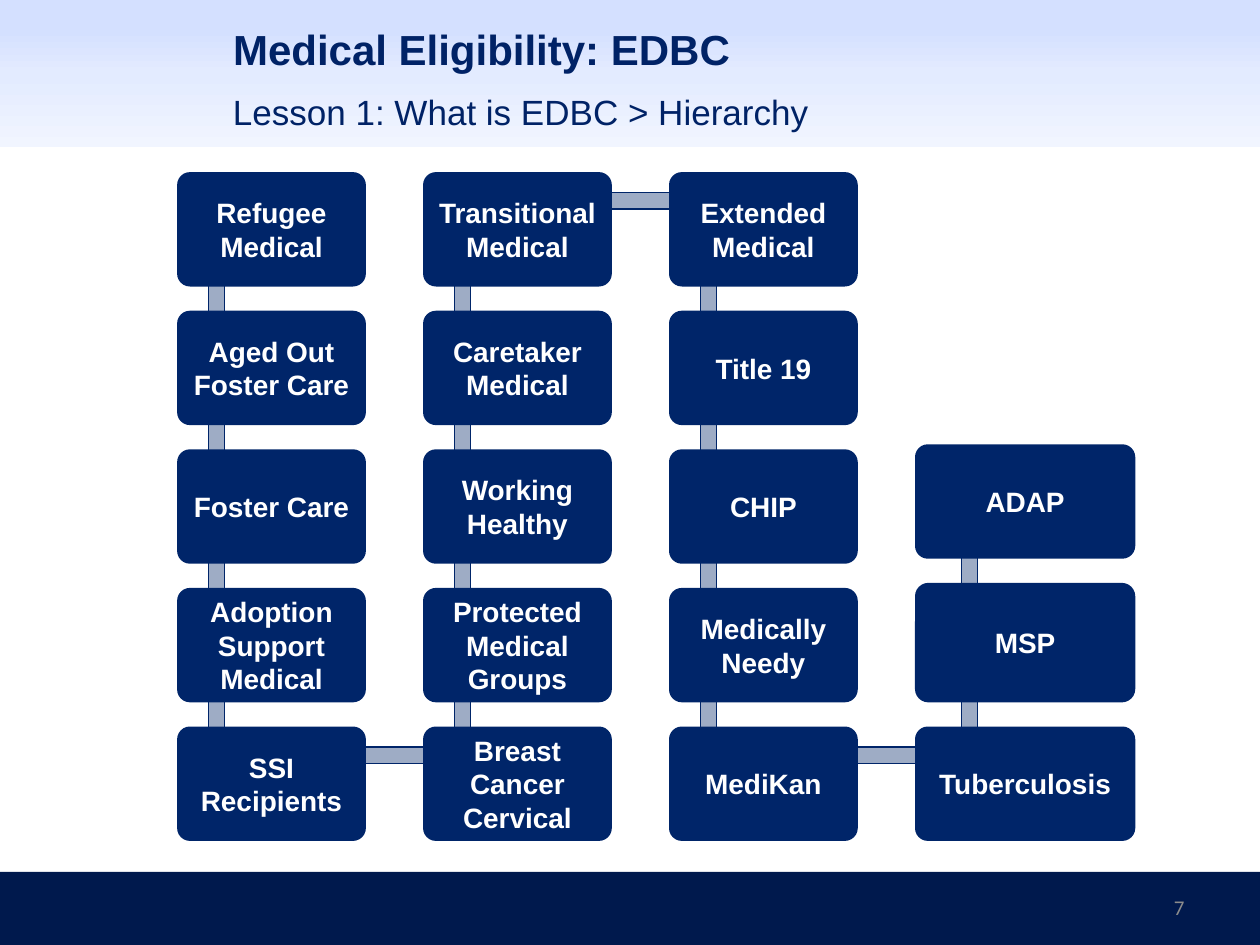
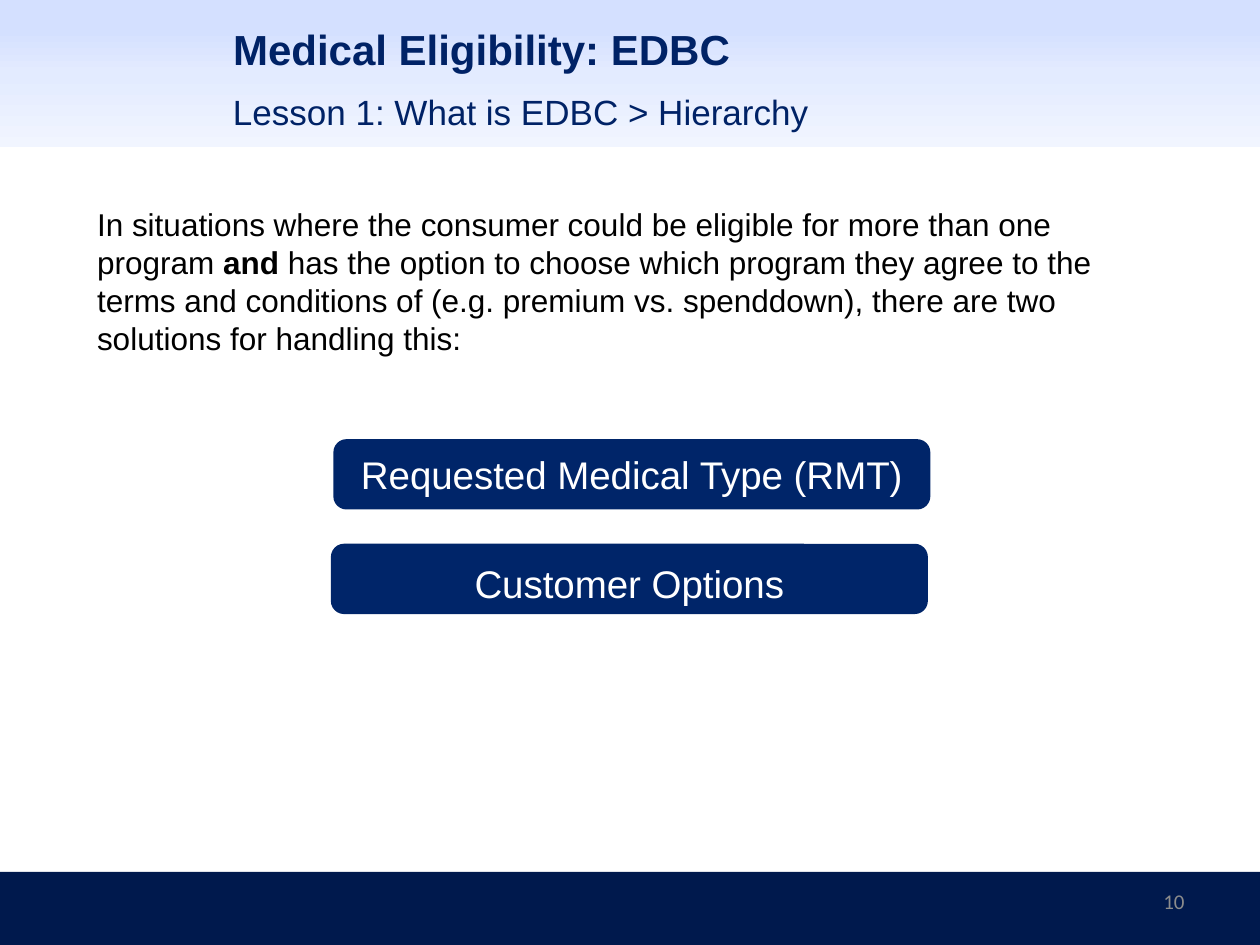
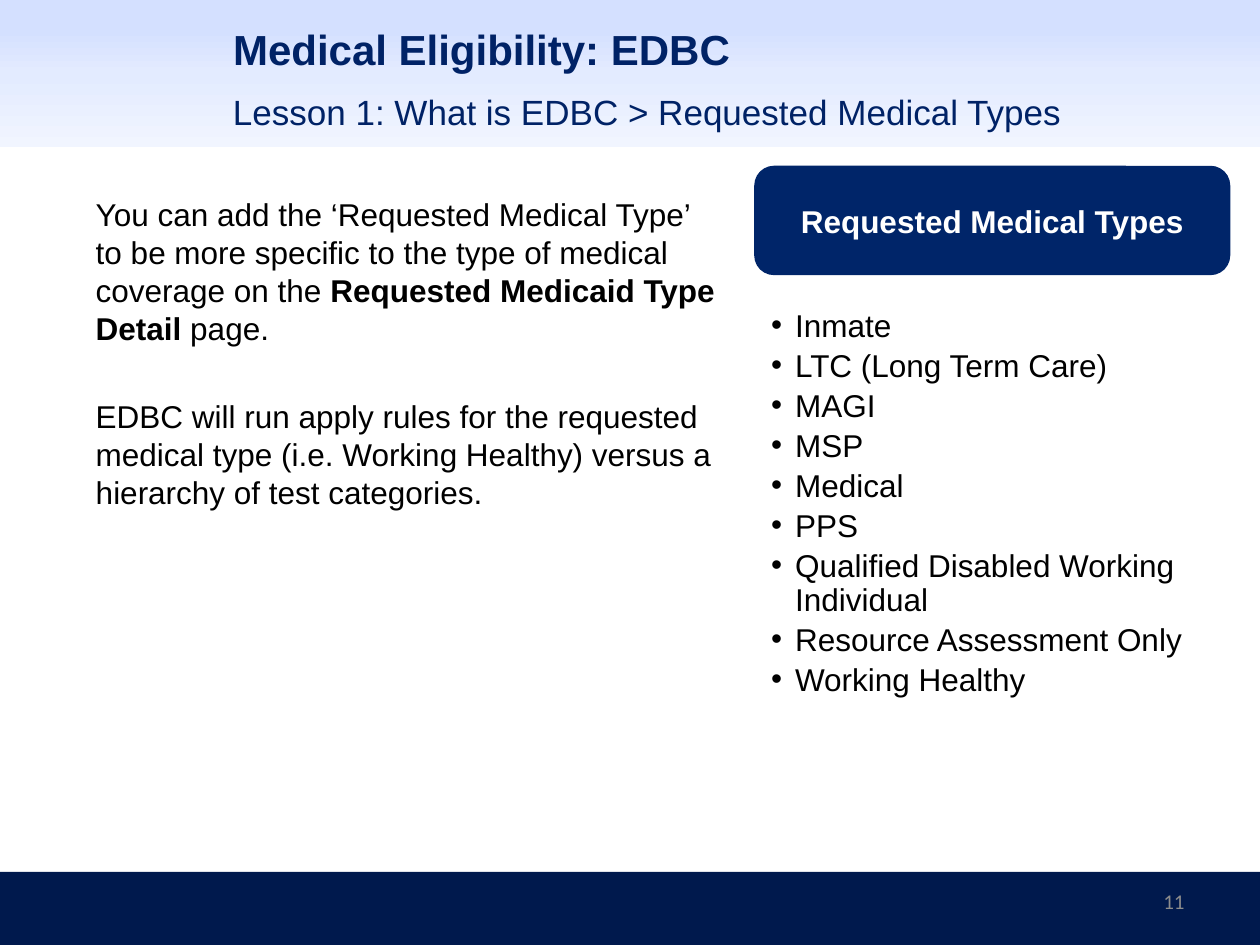
from copy import deepcopy
from itertools import pairwise

from lxml import etree
from pptx import Presentation
from pptx import util as u
from pptx.dml.color import RGBColor
from pptx.enum import shapes, text
from pptx.oxml.ns import qn

COLS, ROWS = 100, 75
NAVY, INK, DEEP = "002569", "002266", "00194D"
WHITE, BLACK, GRAY = "FFFFFF", "000000", "8C8C8C"
SKY = [(0.2, "D4E0FF"), (0.5, "E3EBFF"), (1, "F1F5FF")]
LEFT, MID, RIGHT = text.PP_ALIGN.LEFT, text.PP_ALIGN.CENTER, text.PP_ALIGN.RIGHT
TOP, CORE = text.MSO_ANCHOR.TOP, text.MSO_ANCHOR.MIDDLE
RECT, ROUND = shapes.MSO_SHAPE.RECTANGLE, shapes.MSO_SHAPE.ROUNDED_RECTANGLE


def hue(code):
    return RGBColor.from_string(code)


def write(frame, lines, size=18, color=BLACK, font="Arial", bold=False,
          align=LEFT, anchor=TOP, pad=(0.1, 0.05, 0.1, 0.05),
          gap=0, after=0, lead=None, bullet=None):
    frame.word_wrap = True
    frame.auto_size = text.MSO_AUTO_SIZE.NONE
    frame.vertical_anchor = anchor
    (frame.margin_left, frame.margin_top,
     frame.margin_right, frame.margin_bottom) = map(u.Inches, pad)
    for i, line in enumerate(lines):
        para = frame.add_paragraph() if i else frame.paragraphs[0]
        props = para._p.get_or_add_pPr()
        dent = u.Inches(0.19) if bullet else 0
        props.set("marL", str(dent))
        props.set("indent", str(-dent))
        if bullet:
            etree.SubElement(props, qn("a:buChar")).set("char", bullet)
        else:
            etree.SubElement(props, qn("a:buNone"))
        para.alignment = align
        para.space_before = u.Pt(gap if i else 0)
        para.space_after = u.Pt(after)
        if lead:
            para.line_spacing = lead
        for j, part in enumerate(line.split("*")):
            run = para.add_run()
            run.text = part
            run.font.name, run.font.size = font, u.Pt(size)
            run.font.bold = bold or j % 2 == 1
            run.font.color.rgb = hue(color)


class Deck:
    def __init__(self):
        self.prs = Presentation()
        self.prs.slide_width, self.prs.slide_height = u.Inches(10), u.Inches(7.5)
        self.slide = None

    def area(self, x, y, w, h):
        col, row = self.prs.slide_width / COLS, self.prs.slide_height / ROWS
        return [round(n) for n in (x * col, y * row, w * col, h * row)]

    def open(self, layout, lesson, number, foot=69.5):
        first = self.slide is None
        self.slide = self.prs.slides.add_slide(self.prs.slide_layouts[layout])
        if first:
            self.bands()
        self.fill(0, (17.5, 0.8, 77.5, 6.2), ["Medical Eligibility: EDBC"],
                  size=24, color=INK, bold=True, anchor=CORE)
        self.label((17.5, 6.7, 77.5, 5), lesson, size=20, color=INK)
        self.label((71.7, foot, 23.3, 4), number, size=12, color=GRAY,
                   font="Calibri", align=RIGHT, anchor=CORE)

    def bands(self):
        foot = self.shape(RECT, (0, 69.2, COLS, 5.8), DEEP)
        head = self.shape(RECT, (0, 0, COLS, 11.7), WHITE)
        head.fill.gradient()
        head.fill.gradient_angle = 270
        stops = head.element.spPr.find(qn("a:gradFill")).find(qn("a:gsLst"))
        stops.append(deepcopy(stops[-1]))
        for stop, (place, code) in zip(head.fill.gradient_stops, SKY):
            stop.position, stop.color.rgb = place, hue(code)
        tree = self.prs.slide_master.shapes.element
        for i, band in enumerate((foot, head)):
            band.element.nvSpPr.cNvPr.set("id", str(20 + i))
            tree.insert(2 + i, band.element)

    def shape(self, kind, area, color, edge=0, alpha=None):
        item = self.slide.shapes.add_shape(kind, *self.area(*area))
        item.shadow.inherit = False
        item.fill.solid()
        item.fill.fore_color.rgb = hue(color)
        if edge:
            item.line.color.rgb = hue(color)
            item.line.width = u.Pt(edge)
        else:
            item.line.fill.background()
        if alpha:
            tone = item.element.spPr.find(qn("a:solidFill"))[0]
            etree.SubElement(tone, qn("a:alpha")).set("val", str(alpha * 1000))
        return item

    def box(self, area, words, curve=0.17, drop=0, **form):
        item = self.shape(ROUND, area, NAVY, edge=2)
        item.adjustments[0] = curve
        write(item.text_frame, [words], color=WHITE, align=MID, anchor=CORE,
              pad=(0.07, 0.07 + drop, 0.07, 0.07), **form)

    def bar(self, start, end, thick=1.3):
        (x1, x2), (y1, y2) = (sorted(pair) for pair in zip(start, end))
        half = thick / 2
        if x2 - x1 > y2 - y1:
            area = x1, y1 - half, x2 - x1, thick
        else:
            area = x1 - half, y1, thick, y2 - y1
        self.shape(RECT, area, NAVY, edge=0.75, alpha=38)

    def label(self, area, words, **form):
        item = self.slide.shapes.add_textbox(*self.area(*area))
        write(item.text_frame, [words], **form)

    def fill(self, slot, area, lines, **form):
        item = self.slide.placeholders[slot]
        item.left, item.top, item.width, item.height = self.area(*area)
        write(item.text_frame, lines, **form)


def chain(deck, stacks):
    base, space, pitch = 66.6, 2.2, 19.52
    boxes, joints = [], []
    for col, names in enumerate(stacks):
        last = col == len(stacks) - 1
        left, wide, inset = 14.2 + col * pitch, 17.2 if last else 14.7, 4.2 if last else 3
        floor, stack = base, []
        for name in reversed(names):
            tall = 9.2 if name == "MSP" else 8.8
            stack.append((name, (left, floor - tall, wide, tall), inset))
            floor -= tall + space
        boxes += stack if col % 2 else stack[::-1]
    for name, (left, top, wide, tall), inset in boxes:
        joints.append((left + inset, top + 2.15))
    for start, end in pairwise(joints):
        deck.bar(start, end)
    for name, area, inset in boxes:
        deck.box(area, name, curve=0.1, size=16, bold=True)


def main():
    deck = Deck()
    steps = "Lesson 1: What is EDBC > Hierarchy"

    deck.open(5, steps, "7", foot=70)
    chain(deck, [
        ["Refugee Medical", "Aged Out Foster Care", "Foster Care",
         "Adoption Support Medical", "SSI Recipients"],
        ["Transitional Medical", "Caretaker Medical", "Working Healthy",
         "Protected Medical Groups", "Breast Cancer Cervical"],
        ["Extended Medical", "Title 19", "CHIP", "Medically Needy", "MediKan"],
        ["ADAP", "MSP", "Tuberculosis"],
    ])

    deck.open(1, steps, "10")
    deck.fill(1, (6.7, 15.8, 87.5, 51.2), [
        "In situations where the consumer could be eligible for more than one "
        "program *and* has the option to choose which program they agree to the "
        "terms and conditions of (e.g. premium vs. spenddown), there are two "
        "solutions for handling this:"])
    deck.box((26.6, 35, 47.1, 5.3), "Requested Medical Type (RMT)", size=22)
    deck.box((26.4, 43.3, 47.1, 5.3), "Customer Options", size=22, drop=0.07)

    deck.open(3, "Lesson 1: What is EDBC > Requested Medical Types", "11")
    deck.fill(1, (6.6, 15, 51.7, 47.7), [
        "You can add the ‘Requested Medical Type’ to be more specific to the type "
        "of medical coverage on the *Requested Medicaid Type Detail* page.",
        "EDBC will run apply rules for the requested medical type (i.e. Working "
        "Healthy) versus a hierarchy of test categories."], gap=29)
    deck.box((60, 13.3, 37.5, 8.4), "Requested Medical Types", bold=True)
    deck.fill(2, (60, 24.3, 37.5, 35.7), [
        "Inmate", "LTC (Long Term Care)", "MAGI", "MSP", "Medical", "PPS",
        "Qualified Disabled Working Individual", "Resource Assessment Only",
        "Working Healthy"],
        bullet="•", lead=0.9, after=3.4, pad=(0.12, 0.03, 0.16, 0.03))

    deck.prs.save("out.pptx")


if __name__ == "__main__":
    main()
